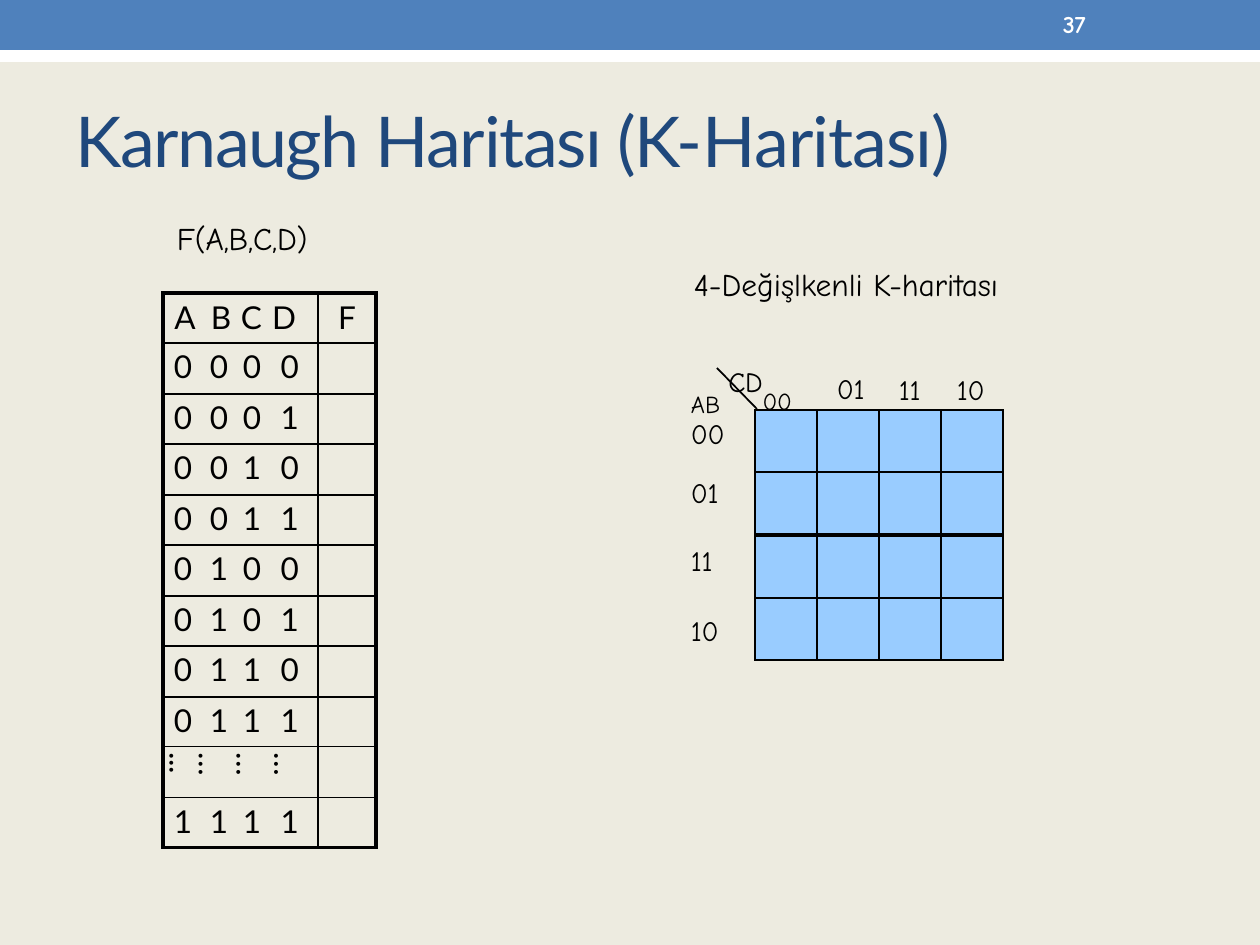
from lxml import etree
from pptx import Presentation, util as u
from pptx.dml import color as colour
from pptx.enum import shapes, text
from pptx.oxml import ns

PX = 914400 // 126
BLACK, CREAM, CELL_BLUE = "000000", "EDEBE0", "99CCFF"
COMIC, LATO = "Comic Neue", "Lato"
NO_STYLE = "{2D5ABB26-0587-4C30-8999-92F81FD0307C}"
ALIGN = text.PP_ALIGN


def rgb(value):
    """Turn a hex string into a colour."""
    return colour.RGBColor.from_string(value)


def scale(*lengths):
    """Turn px lengths into EMU."""
    return [length * PX for length in lengths]


def apply(target, values):
    """Set the attributes of an object from a dict."""
    for name, value in values.items():
        setattr(target, name, value)


def paint(target, value):
    """Give a shape or cell a solid fill."""
    target.fill.solid()
    target.fill.fore_color.rgb = rgb(value)


def add_run(paragraph, words, size, font=COMIC, color=BLACK, bold=False, spacing=0, baseline=0):
    """Add a formatted run with letter spacing in points and baseline in percent."""
    run = paragraph.add_run()
    run.text = words
    apply(run.font, {"size": u.Pt(size), "name": font, "bold": bold})
    run.font.color.rgb = rgb(color)
    properties = run.font._element
    properties.set("spc", str(round(spacing * 100)))
    if baseline:
        properties.set("baseline", str(baseline * 1000))


def format_paragraph(paragraph, before=0, left=2, right=0, align=ALIGN.LEFT, line=1.0):
    """Set the spacing, alignment and indents of a paragraph."""
    apply(paragraph, {"space_before": u.Pt(before), "alignment": align, "line_spacing": line})
    properties = paragraph._p.get_or_add_pPr()
    for name, length in (("marL", left), ("marR", right), ("indent", 0)):
        properties.set(name, str(length * PX))


def fill_frame(shape, box, paragraphs, left=2):
    """Place a text shape and write (space before, runs) paragraphs."""
    apply(shape, dict(zip(("left", "top", "width", "height"), scale(*box))))
    frame = shape.text_frame
    apply(frame, {"margin_left": 0, "margin_right": 0, "margin_top": 2 * PX, "margin_bottom": 0,
                  "word_wrap": True, "vertical_anchor": text.MSO_ANCHOR.TOP,
                  "auto_size": text.MSO_AUTO_SIZE.SHAPE_TO_FIT_TEXT})
    for number, (before, runs) in enumerate(paragraphs):
        paragraph = frame.add_paragraph() if number else frame.paragraphs[0]
        format_paragraph(paragraph, before, left)
        for run in runs:
            add_run(paragraph, **run)


def add_label(slide, box, *runs, left=2):
    """Add a one-paragraph text box."""
    fill_frame(slide.shapes.add_textbox(0, 0, 0, 0), box, [(1, runs)], left)


def add_borders(cell, **widths):
    """Draw cell borders, given as L, R, T and B widths in points."""
    properties = cell._tc.get_or_add_tcPr()
    for position, side in enumerate("LRTB"):
        width = widths[side]
        line = etree.Element(ns.qn(f"a:ln{side}"), w=str(int(width * 12700)))
        fill = etree.SubElement(line, ns.qn("a:solidFill" if width else "a:noFill"))
        if width:
            etree.SubElement(fill, ns.qn("a:srgbClr"), val=BLACK)
        properties.insert(position, line)


def add_grid(slide, left, top, columns, rows, fill):
    """Add an unstyled table with filled cells."""
    frame = slide.shapes.add_table(len(rows), len(columns),
                                   *scale(left, top, sum(columns), sum(rows)))
    table = frame.table
    apply(table, {"first_row": False, "horz_banding": False})
    table._tbl.tblPr.find(ns.qn("a:tableStyleId")).text = NO_STYLE
    for column, width in zip(table.columns, columns):
        column.width = width * PX
    for row, height in zip(table.rows, rows):
        row.height = height * PX
    for cell in table.iter_cells():
        paint(cell, fill)
        apply(cell, {"margin_left": 0, "margin_right": 0, "margin_top": 5 * PX, "margin_bottom": 0})
    return table


def add_bands(slide, width, height):
    """Draw the blue header, the white strip and the cream body."""
    for top, bottom, fill in ((62, height, CREAM), (50, 62, "FFFFFF"), (0, 50, "4F81BC")):
        band = slide.shapes.add_shape(shapes.MSO_SHAPE.RECTANGLE, *scale(0, top, width, bottom - top))
        band.shadow.inherit = False
        band.line.fill.background()
        paint(band, fill)


def add_title(slide, box):
    """Write the title in its placeholder, in front of the bands."""
    title = slide.shapes.title
    slide.shapes._spTree.append(title._element)
    parts = (("Karnaugh ", -0.9), ("Haritası", -0.8), (" (K-", -1.2), ("Haritası)", -0.5))
    fill_frame(title, box, [(1, [
        {"words": words, "size": 40, "font": LATO, "color": "1F487C", "spacing": spacing}
        for words, spacing in parts])])


def add_ellipsis(cell):
    """Write the rotated dots that stand for the omitted rows."""
    cell._tc.get_or_add_tcPr().set("vert", "vert")
    cell.margin_top = 11 * PX
    frame = cell.text_frame
    for number, words in enumerate(("…", "…", "…", "...")):
        paragraph = frame.add_paragraph() if number else frame.paragraphs[0]
        last = number == 3
        format_paragraph(paragraph, 0 if number else 6.2, 6, line=u.Pt(16.6) if last else 1.0)
        add_run(paragraph, words, 18, LATO, spacing=-0.2 if last else 7.2)


def add_truth_table(slide, left, top):
    """Add the function name and its truth table."""
    add_label(slide, (left + 12, top - 76, 156, 42),
              {"words": "F(A,B,C,D)", "size": 18, "spacing": -0.1})
    lines = ["ABCDF", *(f"{number:04b}" for number in range(8)), "", "1111"]
    last = len(lines) - 1
    heights = [50 + row % 2 for row in range(len(lines))]
    table = add_grid(slide, left, top, (39, 34, 31, 51, 58), heights, CREAM)
    header_indents = ((5, 0), (4, 0), (0, 0), (0, 22), (0, 0))
    digit_indents = ((1, 0), (0, 0), (1, 0), (0, 19))
    for row, line in enumerate(lines):
        right_edges = (0, 0, 0, 1, 2.25) if line else (1, 0, 0, 1, 2.25)
        for column in range(5):
            add_borders(table.cell(row, column), L=(2.25, 0, 0, 0, 1)[column], R=right_edges[column],
                        T=1 if row else 2.25, B=2.25 if row == last else 1)
        indents = digit_indents if row else header_indents
        for column, (symbol, (start, end)) in enumerate(zip(line, indents)):
            paragraph = table.cell(row, column).text_frame.paragraphs[0]
            format_paragraph(paragraph, 3.1, start, end,
                             ALIGN.RIGHT if column == 3 else ALIGN.CENTER)
            add_run(paragraph, symbol, 18, LATO, spacing=-0.5)
        if not line:
            table.cell(row, 0).merge(table.cell(row, 3))
            add_ellipsis(table.cell(row, 0))


def add_karnaugh_map(slide, left, top):
    """Add the four-variable map with its heading and axis labels."""
    table = add_grid(slide, left, top, [62] * 4, (62, 63, 63, 62), CELL_BLUE)
    for number, cell in enumerate(table.iter_cells()):
        row = number // 4
        add_borders(cell, L=1, R=1, T=2.25 if row == 2 else 1, B=2.25 if row == 1 else 1)
    code = {"size": 16, "spacing": -0.2}
    for words, across, up in (("01", 80, 40), ("11", 142, 39), ("10", 200, 39)):
        add_label(slide, (left + across, top - up, 40, 38), {"words": words, **code})
    add_label(slide, (left - 69, top - 61, 140, 38),
              {"words": "AB ", "size": 24, "baseline": -49},
              {"words": "CD", **code},
              {"words": "00", "size": 24, "spacing": -0.3, "baseline": -42}, left=5)
    corner = slide.shapes.add_connector(shapes.MSO_CONNECTOR.STRAIGHT,
                                        *scale(left + 2, top - 1, left - 38, top - 42))
    corner.line.width = u.Pt(1)
    corner.line.color.rgb = rgb(BLACK)
    etree.SubElement(corner._element.spPr, ns.qn("a:effectLst"))
    add_label(slide, (left - 63, top - 147, 348, 42),
              {"words": "4-", "size": 18, "spacing": -0.2},
              {"words": "Değişlkenli ", "size": 18},
              {"words": "K-haritası", "size": 18, "spacing": -0.1})
    fill_frame(slide.shapes.add_textbox(0, 0, 0, 0), (left - 66, top + 5, 38, 234),
               [(before, [{"words": words, **code}]) for words, before in
                (("00", 1), ("01", 14.4), ("11", 19.3), ("10", 21.2))])


def main():
    """Build and save the slide."""
    presentation = Presentation()
    width, height = 1260, 945
    apply(presentation, dict(zip(("slide_width", "slide_height"), scale(width, height))))
    slide = presentation.slides.add_slide(presentation.slide_layouts[5])
    add_bands(slide, width, height)
    add_title(slide, (74, 96, 910, 88))
    add_label(slide, (1061, 7, 36, 33),
              {"words": "37", "size": 14, "color": "FFFFFF", "bold": True, "spacing": -0.2})
    add_truth_table(slide, 163, 293)
    add_karnaugh_map(slide, 755, 410)
    presentation.save("out.pptx")


if __name__ == "__main__":
    main()
